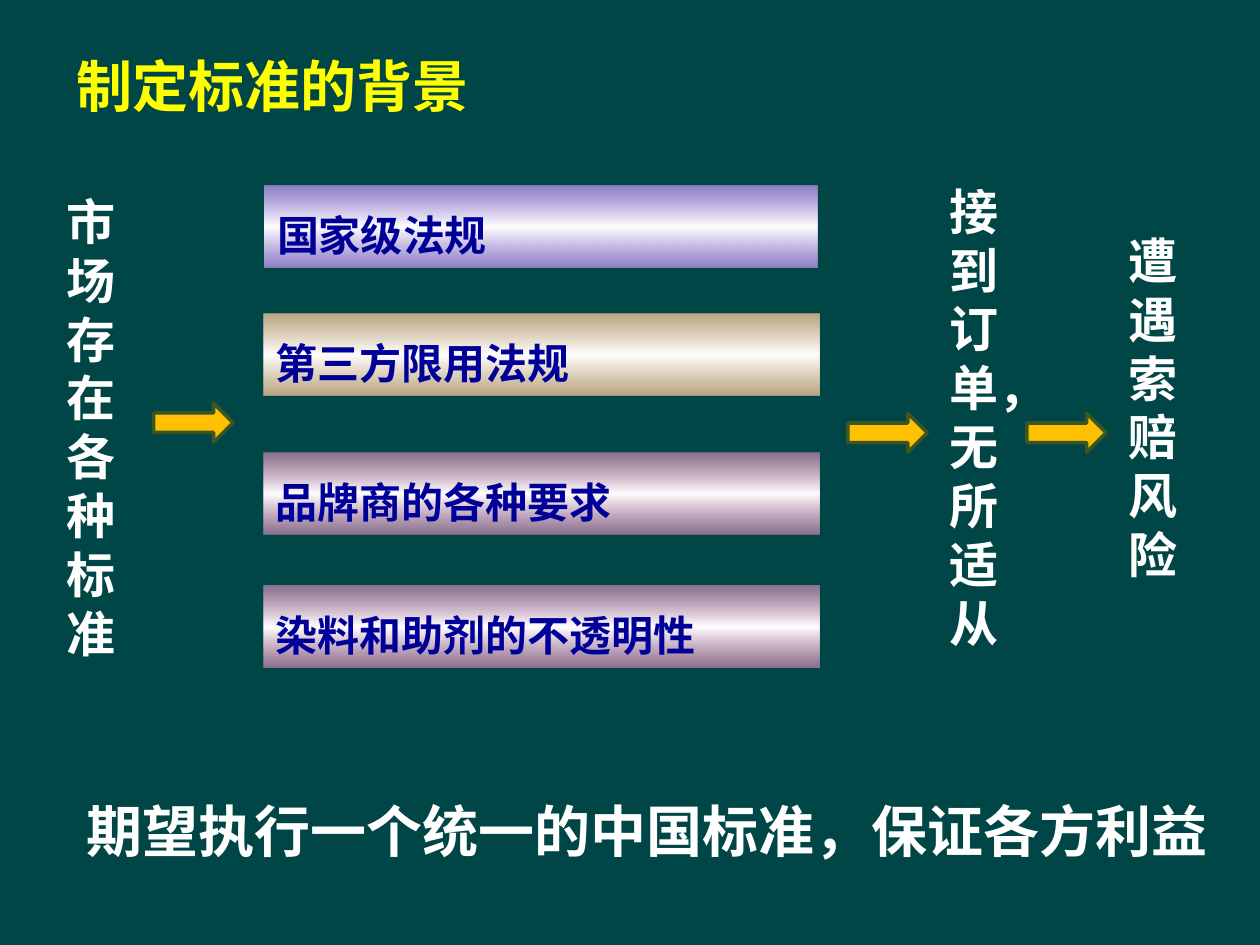
from copy import deepcopy

from lxml.etree import SubElement
from pptx import Presentation
from pptx.dml.color import RGBColor
from pptx.enum.lang import MSO_LANGUAGE_ID as LANG
from pptx.enum.shapes import MSO_SHAPE as SHAPE
from pptx.enum.text import MSO_ANCHOR as ANCHOR, PP_ALIGN as ALIGN
from pptx.oxml.ns import qn
from pptx.util import Inches, Pt

COLORS = {
    "bg": "004646", "title": "FFFF00", "text": "FFFFFF", "bar_text": "000099",
    "arrow": "FFC000", "arrow_line": "3B5623", "white": "FFFFFF",
    "purple": "CC99FF", "tan": "FFCC99", "pink": "FF99CC",
}


def rgb(name):
    return RGBColor.from_string(COLORS[name])


def set_text(sp, text, size, color, spacing=1.0):
    tf = sp.text_frame
    frame_format = {
        "word_wrap": True, "vertical_anchor": ANCHOR.TOP,
        "margin_left": Inches(0.1), "margin_right": Inches(0.1),
        "margin_top": Inches(0.05), "margin_bottom": Inches(0.05),
    }
    for key, value in frame_format.items():
        setattr(tf, key, value)
    p = tf.paragraphs[0]
    p.alignment = ALIGN.LEFT
    p.line_spacing = spacing
    r = p.add_run()
    r.text = text
    font_format = {"name": "Arial", "size": Pt(size), "bold": True,
                   "language_id": LANG.SIMPLIFIED_CHINESE}
    for key, value in font_format.items():
        setattr(r.font, key, value)
    r.font.color.rgb = rgb(color)


def add_title(s, box, text):
    sp = s.shapes.title
    sp.left, sp.top, sp.width, sp.height = map(Inches, box)
    set_text(sp, text, 32, "title")


def add_label(s, box, text, size):
    sp = s.shapes.add_textbox(*map(Inches, box))
    set_text(sp, text, size, "text")


def fill_gradient(sp, edge, opacity):
    sp.fill.gradient()
    sp.fill.gradient_angle = 90
    outer, middle = sp.fill.gradient_stops
    outer.color.rgb = rgb(edge)
    middle.color.rgb = rgb("white")
    middle.position = 0.5
    stops = sp.element.spPr.find(".//" + qn("a:gsLst"))
    alpha = SubElement(stops[0][0], qn("a:alpha"))
    alpha.set("val", str(opacity * 1000))
    stops.append(deepcopy(stops[0]))
    stops[-1].set("pos", "100000")


def add_bar(s, box, text, edge, opacity):
    sp = s.shapes.add_shape(SHAPE.RECTANGLE, *map(Inches, box))
    sp.shadow.inherit = False
    sp.line.fill.background()
    fill_gradient(sp, edge, opacity)
    set_text(sp, text, 24, "bar_text", 1.35)


def add_arrow(s, box):
    sp = s.shapes.add_shape(SHAPE.RIGHT_ARROW, *map(Inches, box))
    sp.shadow.inherit = False
    sp.fill.solid()
    sp.fill.fore_color.rgb = rgb("arrow")
    sp.line.color.rgb = rgb("arrow_line")
    sp.line.width = Pt(2)


def main():
    prs = Presentation()
    prs.slide_width, prs.slide_height = Inches(10), Inches(7.5)
    s = prs.slides.add_slide(prs.slide_layouts[5])
    s.background.fill.solid()
    s.background.fill.fore_color.rgb = rgb("bg")

    add_title(s, (0.51, 0.36, 5.28, 0.64), "制定标准的背景")

    bars = [
        (2.1, 1.47, 4.39, "国家级法规", "purple", 69),
        (2.09, 2.49, 4.41, "第三方限用法规", "tan", 72),
        (2.09, 3.59, 4.41, "品牌商的各种要求", "pink", 53),
        (2.09, 4.65, 4.41, "染料和助剂的不透明性", "pink", 53),
    ]
    for left, top, width, text, edge, opacity in bars:
        add_bar(s, (left, top, width, 0.65), text, edge, opacity)

    columns = [
        ((0.43, 1.47, 0.47, 3.87), "市场存在各种标准"),
        ((7.44, 1.39, 0.87, 3.87), "接到订单，无所适从"),
        ((8.86, 1.78, 0.63, 2.93), "遭遇索赔风险"),
    ]
    for box, text in columns:
        add_label(s, box, text, 28)

    for left, top in [(1.22, 3.2), (6.73, 3.28), (8.15, 3.28)]:
        add_arrow(s, (left, top, 0.63, 0.31))

    add_label(s, (0.59, 6.27, 9.13, 0.64),
              "期望执行一个统一的中国标准，保证各方利益", 32)
    prs.save("out.pptx")


if __name__ == "__main__":
    main()
